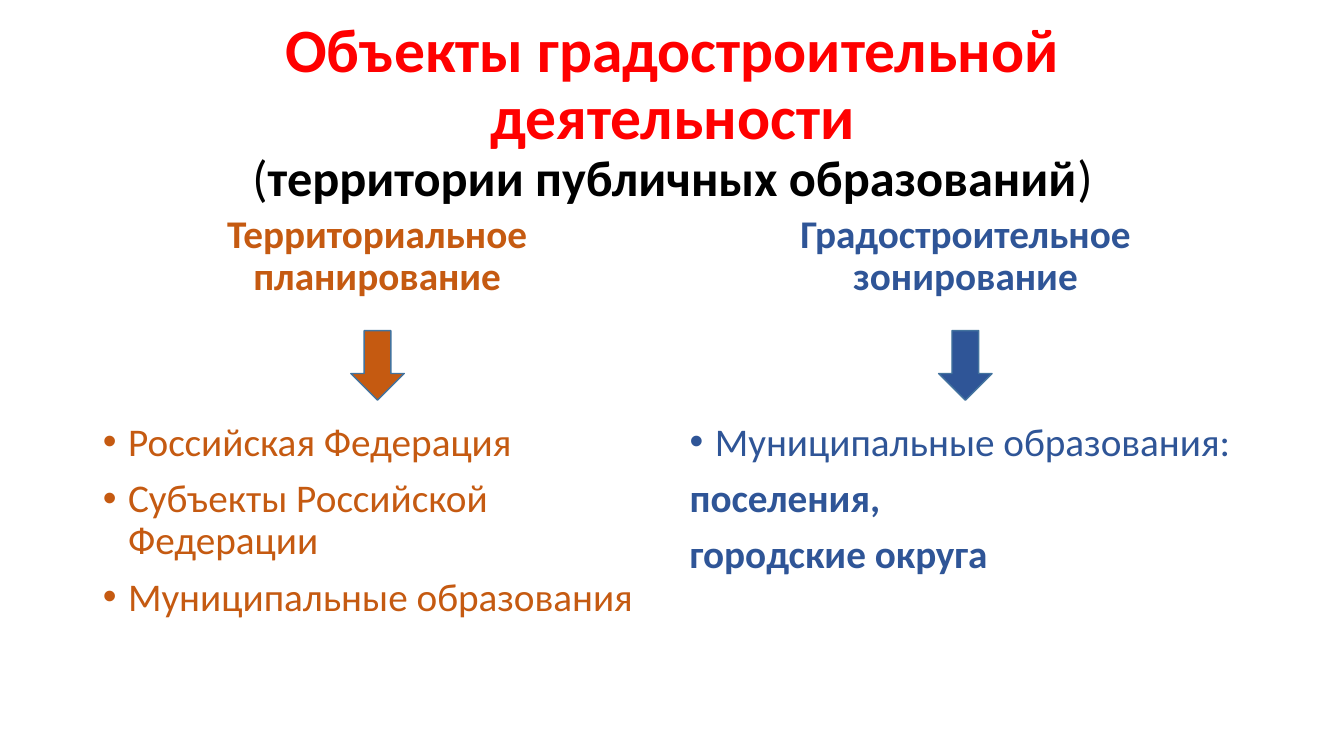
from lxml.etree import SubElement
from pptx import Presentation
from pptx.dml.color import RGBColor
from pptx.enum.shapes import MSO_SHAPE
from pptx.enum.text import MSO_ANCHOR, MSO_AUTO_SIZE, PP_ALIGN
from pptx.oxml.ns import qn
from pptx.util import Pt

PX = 9144
FONT = "Calibri"
RED, BLACK, EDGE = "FF0000", "000000", "43739E"
TITLE = [
    ("Объекты градостроительной деятельности", 44, RED, True),
    ("(", 36, BLACK, False),
    ("территории публичных образований", 36, BLACK, True),
    (")", 36, BLACK, False),
]
SIDES = [
    {
        "left": 92, "width": 564, "arrow": 348, "color": "C55A11",
        "head": "Территориальное планирование",
        "items": [
            ("Российская Федерация", True),
            ("Субъекты Российской Федерации", True),
            ("Муниципальные образования", True),
        ],
    },
    {
        "left": 674, "width": 567, "arrow": 931, "color": "2F5597",
        "head": "Градостроительное зонирование",
        "items": [
            ("Муниципальные образования:", True),
            ("поселения,", False),
            ("городские округа", False),
        ],
    },
]


def px(count):
    return count * PX


def paint(target, color):
    target.rgb = RGBColor.from_string(color)


def apply(target, values):
    for name, value in values.items():
        setattr(target, name, value)


def place(shape, left, top, width, height):
    apply(shape, {"left": px(left), "top": px(top),
                  "width": px(width), "height": px(height)})


def setup(shape, box, anchor):
    place(shape, *box)
    frame = shape.text_frame
    apply(frame, {"word_wrap": True, "auto_size": MSO_AUTO_SIZE.NONE,
                  "vertical_anchor": anchor})
    return frame


def add_run(para, text, size, color, bold):
    run = para.add_run()
    run.text = text
    apply(run.font, {"name": FONT, "size": Pt(size), "bold": bold})
    paint(run.font.color, color)


def format_para(para, align, before=0):
    apply(para, {"alignment": align, "line_spacing": 0.9,
                 "space_before": Pt(before), "space_after": Pt(0)})


def set_mark(para, shown):
    props = para._p.get_or_add_pPr()
    indent = px(25) if shown else 0
    props.set("marL", str(indent))
    props.set("indent", str(-indent))
    if shown:
        SubElement(props, qn("a:buFont")).set("typeface", "Arial")
        SubElement(props, qn("a:buChar")).set("char", "•")
    else:
        SubElement(props, qn("a:buNone"))


def fill_title(shape):
    frame = setup(shape, (92, 40, 1150, 145), MSO_ANCHOR.MIDDLE)
    para = frame.paragraphs[0]
    format_para(para, PP_ALIGN.CENTER)
    first, *rest = TITLE
    add_run(para, *first)
    para.add_line_break()
    for part in rest:
        add_run(para, *part)


def fill_head(shape, side):
    box = (side["left"], 212, side["width"], 90)
    para = setup(shape, box, MSO_ANCHOR.BOTTOM).paragraphs[0]
    format_para(para, PP_ALIGN.CENTER)
    add_run(para, side["head"], 28, side["color"], True)


def fill_list(shape, side):
    box = (side["left"], 414, side["width"], 290)
    frame = setup(shape, box, MSO_ANCHOR.TOP)
    for index, (text, marked) in enumerate(side["items"]):
        para = frame.add_paragraph() if index else frame.paragraphs[0]
        format_para(para, PP_ALIGN.LEFT, 10 if index else 0)
        set_mark(para, marked)
        add_run(para, text, 28, side["color"], not marked)


def add_arrow(slide, side):
    box = map(px, (side["arrow"], 328, 53, 69))
    arrow = slide.shapes.add_shape(MSO_SHAPE.DOWN_ARROW, *box)
    arrow.shadow.inherit = False
    arrow.fill.solid()
    paint(arrow.fill.fore_color, side["color"])
    paint(arrow.line.color, EDGE)
    arrow.line.width = Pt(1)


def main():
    deck = Presentation()
    apply(deck, {"slide_width": px(1333), "slide_height": px(750)})
    slide = deck.slides.add_slide(deck.slide_layouts[4])
    title, *bodies = slide.placeholders
    fill_title(title)
    for side, head, body in zip(SIDES, bodies[::2], bodies[1::2]):
        fill_head(head, side)
        fill_list(body, side)
        add_arrow(slide, side)
    deck.save("out.pptx")


if __name__ == "__main__":
    main()
